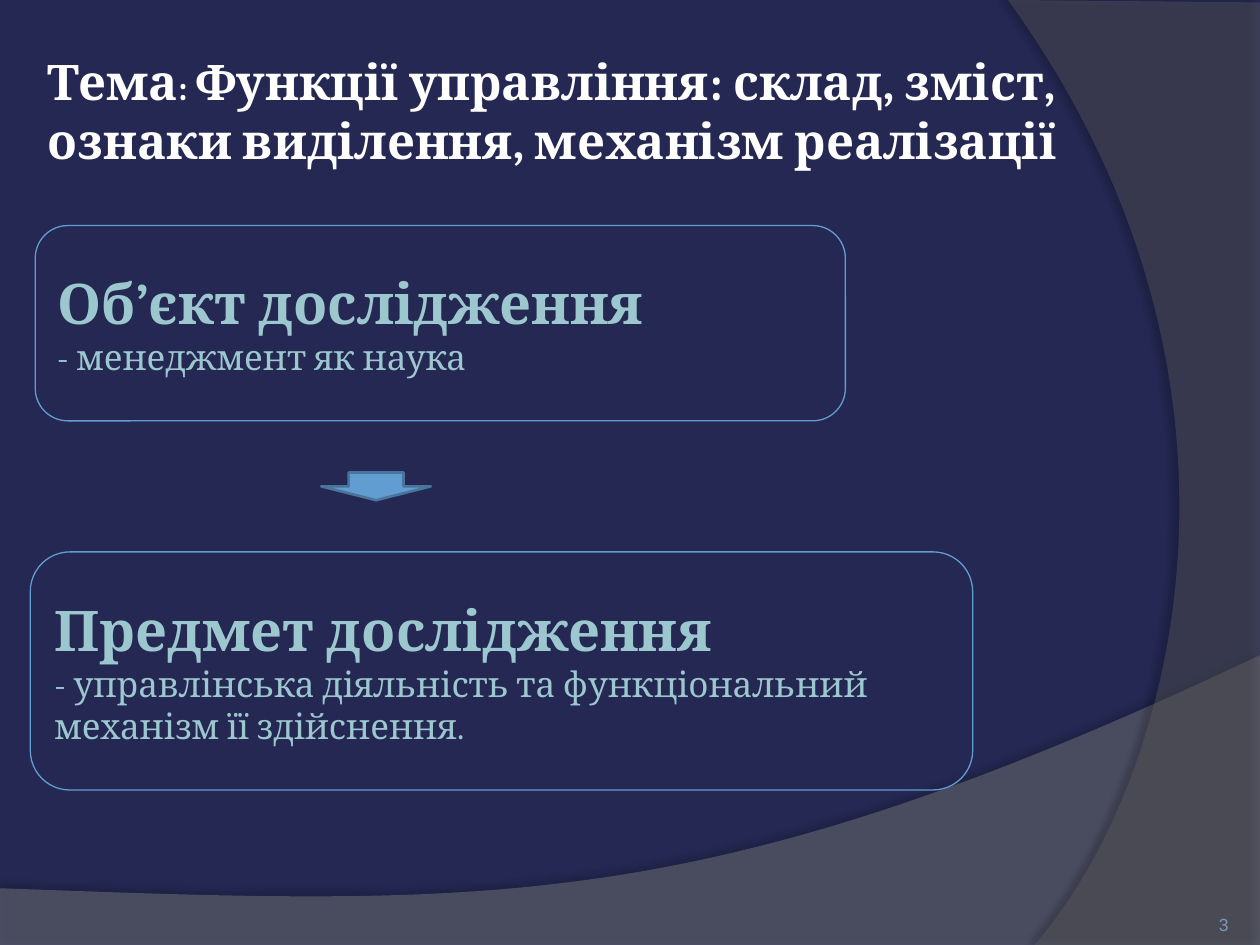
from lxml import etree
from pptx import Presentation
from pptx import util as u
from pptx.dml.color import RGBColor
from pptx.enum import shapes, text
from pptx.oxml.ns import qn

WIDTH, HEIGHT = u.Inches(10), u.Inches(7.5)
COLORS = {
    "background": "242852", "wave": "7F7F7F", "arc": "5E5E5E", "shadow": "000000",
    "title": "FFFFFF", "body": "9CC7CE", "accent": "629DD1",
    "arrow_edge": "49749B", "number": "7F96B8",
}


def color(name):
    return RGBColor.from_string(COLORS[name])


def box(left, top, width, height):
    return [u.Inches(value) for value in (left, top, width, height)]


def format_run(run, size, color_name, bold=False, font="Cambria"):
    run.font.name = font
    run.font.size = u.Pt(size)
    run.font.bold = bold
    run.font.color.rgb = color(color_name)


def bezier(start, control_1, control_2, end, steps=60):
    """Points along a cubic curve, without its start."""
    points = []
    for step in range(1, steps + 1):
        t = step / steps
        weights = ((1 - t) ** 3, 3 * t * (1 - t) ** 2, 3 * t * t * (1 - t), t ** 3)
        corners = (start, control_1, control_2, end)
        points.append(tuple(sum(w * c[axis] for w, c in zip(weights, corners))
                            for axis in (0, 1)))
    return points


def add_color_xml(parent, color_name, opacity):
    element = etree.SubElement(parent, qn("a:srgbClr"), val=COLORS[color_name])
    etree.SubElement(element, qn("a:alpha"), val=str(opacity * 1000))


def add_backdrop(slide, points, color_name, opacity, shadow_opacity, distance, angle):
    """Translucent outline with a soft shadow."""
    corners = [(u.Inches(x), u.Inches(y)) for x, y in points]
    builder = slide.shapes.build_freeform(*corners[0], scale=1.0)
    builder.add_line_segments(corners[1:], close=True)
    shape = builder.convert_to_shape()
    shape.line.fill.background()
    shape.shadow.inherit = False
    properties = shape._element.spPr

    shape.fill.solid()
    fill = properties.find(qn("a:solidFill"))
    fill.clear()
    add_color_xml(fill, color_name, opacity)

    shadow = etree.SubElement(
        properties.find(qn("a:effectLst")), qn("a:outerShdw"),
        blurRad=str(u.Pt(4)), dist=str(u.Pt(distance)), dir=str(angle * 60000),
        algn="ctr", rotWithShape="0")
    add_color_xml(shadow, "shadow", shadow_opacity)


def add_title(slide, parts):
    title = slide.shapes.title
    title.left, title.top, title.width, title.height = box(0.28, 0.36, 8.41, 1.35)
    frame = title.text_frame
    frame.auto_size = text.MSO_AUTO_SIZE.NONE
    frame.vertical_anchor = text.MSO_ANCHOR.TOP
    paragraph = frame.paragraphs[0]
    paragraph.alignment = text.PP_ALIGN.LEFT
    for words, size in parts:
        run = paragraph.add_run()
        run.text = words
        format_run(run, size, "title", bold=True)


def add_card(slide, place, heading, detail):
    card = slide.shapes.add_shape(shapes.MSO_SHAPE.ROUNDED_RECTANGLE, *box(*place))
    card.shadow.inherit = False
    card.fill.background()
    card.line.color.rgb = color("accent")
    card.line.width = u.Pt(0.75)
    frame = card.text_frame
    frame.word_wrap = True
    frame.vertical_anchor = text.MSO_ANCHOR.MIDDLE
    frame.text = f"{heading}\n{detail}"
    for paragraph, size, bold in zip(frame.paragraphs, (32, 20), (True, False)):
        paragraph.alignment = text.PP_ALIGN.LEFT
        format_run(paragraph.runs[0], size, "body", bold)


def add_down_arrow(slide, place):
    arrow = slide.shapes.add_shape(shapes.MSO_SHAPE.DOWN_ARROW, *box(*place))
    arrow.shadow.inherit = False
    arrow.fill.solid()
    arrow.fill.fore_color.rgb = color("accent")
    arrow.line.color.rgb = color("arrow_edge")
    arrow.line.width = u.Pt(1.5)


def add_page_number(slide, number):
    frame = slide.shapes.add_textbox(*box(8.92, 7.02, 0.83, 0.4)).text_frame
    frame.margin_left = frame.margin_right = frame.margin_top = frame.margin_bottom = 0
    frame.word_wrap = True
    frame.vertical_anchor = text.MSO_ANCHOR.BOTTOM
    frame.text = str(number)
    paragraph = frame.paragraphs[0]
    paragraph.alignment = text.PP_ALIGN.RIGHT
    format_run(paragraph.runs[0], 10, "number", font="Arial")


def main():
    presentation = Presentation()
    presentation.slide_width, presentation.slide_height = WIDTH, HEIGHT
    slide = presentation.slides.add_slide(presentation.slide_layouts[5])
    slide.background.fill.solid()
    slide.background.fill.fore_color.rgb = color("background")

    # Backdrop: a wave along the bottom and an arc on the right
    wave = [(0, 7.05), (0, 7.51), (10, 7.51), (10, 5.2)]
    wave += bezier(wave[-1], (5.59, 7.29), (3.91, 7.19), wave[0])
    add_backdrop(slide, wave, "wave", 45, 35, 3.5, 270)
    arc = [(10, 0.02), (10, 7.5), (8.21, 7.5)]
    arc += bezier(arc[-1], (9.35, 6.19), (10.18, 3), (8, 0))
    add_backdrop(slide, arc, "arc", 40, 45, 4, 180)

    # Topic
    add_title(slide, [
        ("Тема", 28), (": ", 20),
        ("Функції управління: склад, зміст, ознаки виділення, механізм реалізації", 28),
    ])

    # Object of research leading to its subject
    add_card(slide, (0.28, 1.79, 6.43, 1.55),
             "Об’єкт дослідження", "- менеджмент як наука")
    add_card(slide, (0.24, 4.38, 7.48, 1.89), "Предмет дослідження",
             "- управлінська діяльність та функціональний механізм її здійснення.")
    add_down_arrow(slide, (2.55, 3.75, 0.87, 0.22))

    add_page_number(slide, 3)
    presentation.save("out.pptx")


if __name__ == "__main__":
    main()
